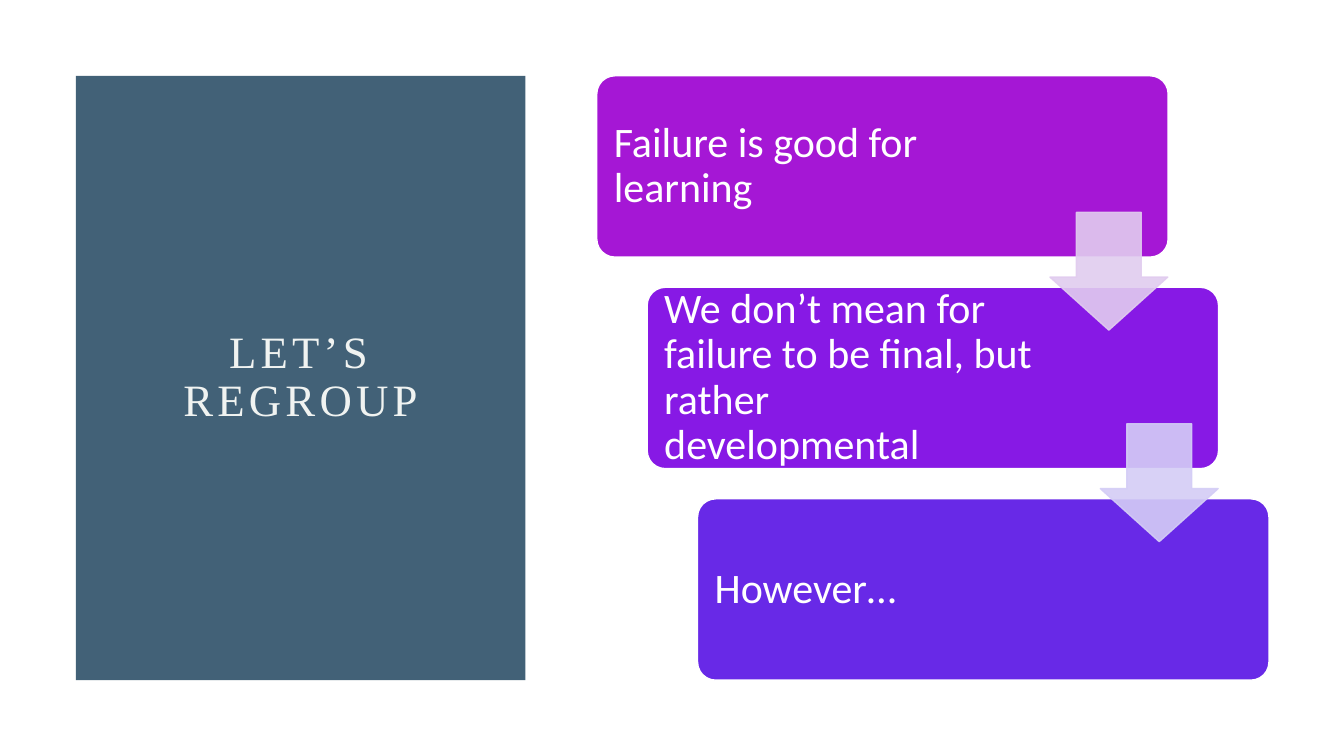
from lxml import etree
from pptx import Presentation
from pptx.dml.color import RGBColor
from pptx.enum.shapes import MSO_SHAPE
from pptx.enum.text import MSO_ANCHOR, MSO_AUTO_SIZE, PP_ALIGN
from pptx.oxml.ns import qn
from pptx.util import Cm, Pt

RECTANGLE = MSO_SHAPE.RECTANGLE
ROUNDED_RECTANGLE = MSO_SHAPE.ROUNDED_RECTANGLE
DOWN_ARROW = MSO_SHAPE.DOWN_ARROW
MIDDLE = MSO_ANCHOR.MIDDLE
NO_AUTOFIT = MSO_AUTO_SIZE.NONE
LEFT = PP_ALIGN.LEFT
CENTER = PP_ALIGN.CENTER

SLATE = RGBColor(0x42, 0x61, 0x77)
IVORY = RGBColor(0xF0, 0xF3, 0xF1)
WHITE = RGBColor(0xFF, 0xFF, 0xFF)
MAGENTA = RGBColor(0xA5, 0x17, 0xD5)
PURPLE = RGBColor(0x87, 0x19, 0xE5)
VIOLET = RGBColor(0x68, 0x29, 0xE7)
PALE_PINK = RGBColor(0xE1, 0xCC, 0xEF)
PALE_VIOLET = RGBColor(0xD4, 0xCD, 0xF6)

TITLE_ONLY = 5
STEPS = [
    ("Failure is good for learning", MAGENTA),
    ("We don’t mean for failure to be final, but rather developmental", PURPLE),
    ("However…", VIOLET),
]
ARROW_COLORS = [PALE_PINK, PALE_VIOLET]


def add_filled_shape(slide, kind, box, fill, line=None):
    """Add a preset shape with a solid fill and an optional outline."""
    shape = slide.shapes.add_shape(kind, *box)
    shape.shadow.inherit = False
    shape.fill.solid()
    shape.fill.fore_color.rgb = fill
    if line is None:
        shape.line.fill.background()
    else:
        shape.line.color.rgb = line
        shape.line.width = Pt(1)
    return shape


def set_text(shape, text, font_name, size, color, alignment):
    """Fill a shape with one vertically centred, wrapped paragraph."""
    frame = shape.text_frame
    frame.text = text
    frame.word_wrap = True
    frame.auto_size = NO_AUTOFIT
    frame.vertical_anchor = MIDDLE
    paragraph = frame.paragraphs[0]
    paragraph.alignment = alignment
    paragraph.line_spacing = 0.9
    font = paragraph.runs[0].font
    font.name = font_name
    font.size = Pt(size)
    font.color.rgb = color
    return frame


def add_title_panel(slide, left, top, width, height):
    """Place the title inside a solid panel lying behind it."""
    panel = add_filled_shape(slide, RECTANGLE, (left, top, width, height), SLATE)
    title = slide.shapes.title
    title.element.addprevious(panel.element)
    inset = Cm(1.9)
    title.left, title.top = left + inset, top + inset
    title.width, title.height = width - 2 * inset, height - 2 * inset
    frame = set_text(title, "LET’S REGROUP", "Times New Roman", 32, IVORY, CENTER)
    properties = frame.paragraphs[0].runs[0].font._element
    properties.set("spc", "300")


def add_step_card(slide, left, top, width, height, text, color):
    """Add a rounded card with its text on the left."""
    box = (left, top, width, height)
    card = add_filled_shape(slide, ROUNDED_RECTANGLE, box, color, WHITE)
    card.adjustments[0] = 0.1
    inset = Cm(0.13)
    label = slide.shapes.add_textbox(
        left + inset, top + inset, Cm(9.88), height - 2 * inset)
    frame = set_text(label, text, "Calibri", 30, WHITE, LEFT)
    frame.margin_left = frame.margin_right = Cm(0.3)
    frame.margin_top = frame.margin_bottom = Cm(0.3)


def add_step_arrow(slide, left, top, size, color):
    """Add a slightly transparent arrow pointing to the next card."""
    arrow = add_filled_shape(slide, DOWN_ARROW, (left, top, size, size), color, color)
    arrow.adjustments[0] = 0.55
    arrow.adjustments[1] = 0.45
    for color_element in arrow.element.spPr.iter(qn("a:srgbClr")):
        etree.SubElement(color_element, qn("a:alpha"), val="90000")


def add_staircase(slide, left, top, width, height):
    """Step the cards down and to the right, with arrows between them."""
    card_width, card_height = Cm(14.4), Cm(4.57)
    gaps = len(STEPS) - 1
    shift = (width - card_width) // gaps
    drop = (height - card_height) // gaps
    for index, (text, color) in enumerate(STEPS):
        add_step_card(slide, left + index * shift, top + index * drop,
                      card_width, card_height, text, color)
    for index, color in enumerate(ARROW_COLORS):
        add_step_arrow(slide, left + index * shift + Cm(11.42),
                       top + index * drop + Cm(3.44), Cm(2.97), color)


def main():
    """Build the slide and save the presentation."""
    presentation = Presentation()
    presentation.slide_width = Cm(33.87)
    presentation.slide_height = Cm(19.05)
    slide = presentation.slides.add_slide(presentation.slide_layouts[TITLE_ONLY])
    margin = Cm(1.91)
    body_height = presentation.slide_height - 2 * margin
    add_title_panel(slide, margin, margin, Cm(11.33), body_height)
    add_staircase(slide, Cm(15.04), margin, Cm(16.94), body_height)
    presentation.save("out.pptx")


if __name__ == "__main__":
    main()
